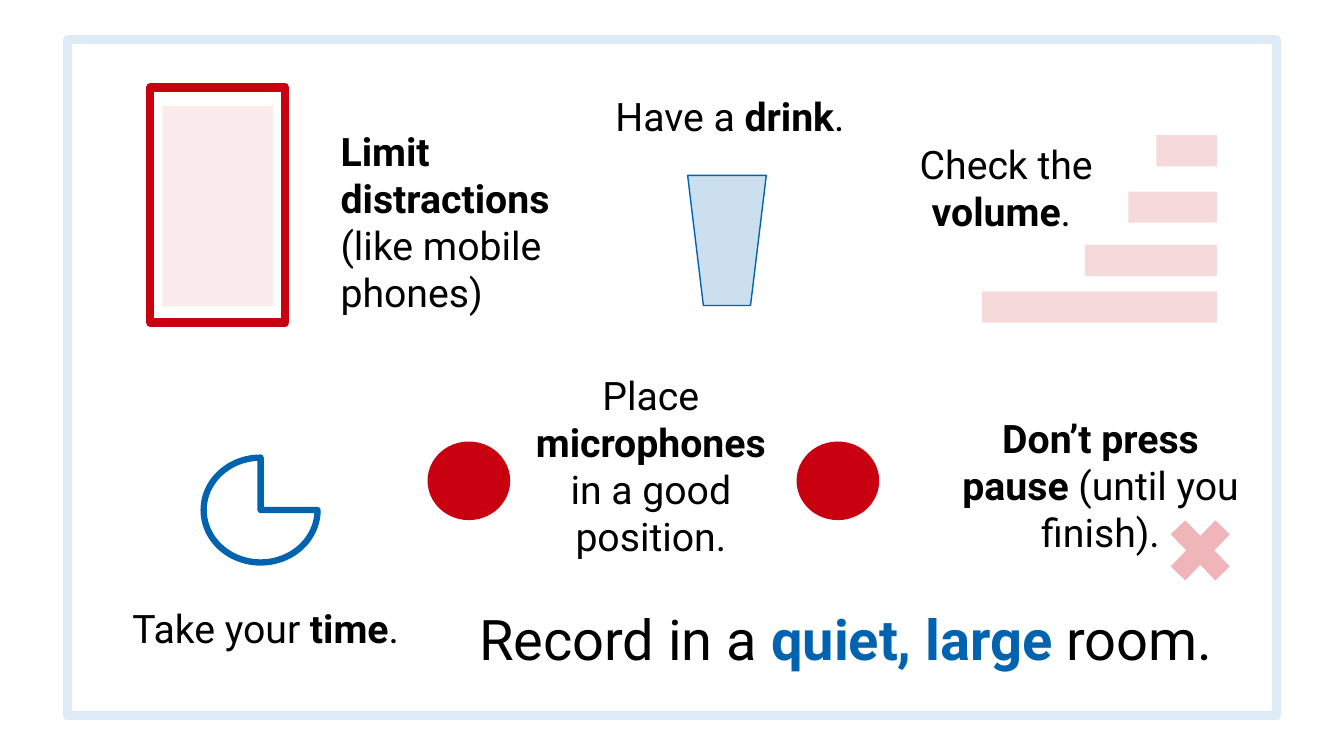
"""Build a slide of tips for making a good recording."""
from lxml.etree import SubElement
from pptx import Presentation
from pptx.dml.color import RGBColor
from pptx.enum.shapes import MSO_SHAPE as Kind
from pptx.enum.text import MSO_AUTO_SIZE as Fit, PP_ALIGN as Align
from pptx.oxml.ns import qn
from pptx.util import Inches, Pt

HUES = {"frame": "DEEBF7", "red": "C8000F", "blue": "0063AF", "text": "000000"}


def hue(name):
    """Return a named colour."""
    return RGBColor.from_string(HUES[name])


def draw(slide, kind, box, fill=None, alpha=100, line=None, width=1):
    """Add a flat shape with an optional tint and outline."""
    shape = slide.shapes.add_shape(kind, *map(Inches, box))
    shape.shadow.inherit = False
    if fill:
        shape.fill.solid()
        shape.fill.fore_color.rgb = hue(fill)
        if alpha < 100:
            tint = shape.fill._xPr.find(".//" + qn("a:srgbClr"))
            SubElement(tint, qn("a:alpha"), val=str(alpha * 1000))
    else:
        shape.fill.background()
    if line:
        shape.line.color.rgb = hue(line)
        shape.line.width = Pt(width)
    else:
        shape.line.fill.background()


def write(slide, box, parts, size=28, align=Align.CENTER, accent="text"):
    """Add one paragraph whose parts are pairs of words and boldness."""
    frame = slide.shapes.add_textbox(*map(Inches, box)).text_frame
    frame.word_wrap = True
    frame.auto_size = Fit.SHAPE_TO_FIT_TEXT
    para = frame.paragraphs[0]
    para.alignment = align
    para.font.name = "Roboto"
    para.font.size = Pt(size)
    for words, bold in parts:
        run = para.add_run()
        run.text = words
        run.font.bold = bold
        run.font.color.rgb = hue(accent if bold else "text")


def add_phone(slide, x, y):
    """Draw the phone and its tip."""
    draw(slide, Kind.RECTANGLE, (x, y, 1.34, 2.33), line="red", width=6)
    draw(slide, Kind.RECTANGLE, (x + 0.12, y + 0.18, 1.1, 1.99), "red", 8)
    write(slide, (x + 1.79, y + 0.34, 2.46, 1.99),
          [("Limit distractions ", True), ("(like mobile phones)", False)],
          align=Align.LEFT)


def add_drink(slide, x, y):
    """Draw the glass below its tip."""
    write(slide, (x, y, 2.64, 0.57),
          [("Have a ", False), ("drink", True), (".", False)])
    draw(slide, Kind.FLOWCHART_MANUAL_OPERATION,
         (x + 0.9, y + 0.87, 0.78, 1.29), "blue", 20, "blue")


def add_volume(slide, x, y):
    """Draw the right-aligned volume bars and their tip."""
    right = x + 3.39
    for drop, wide in ((0, 0.6), (0.56, 0.88), (1.09, 1.31), (1.55, 2.33)):
        draw(slide, Kind.RECTANGLE, (right - wide, y + drop, wide, 0.31), "red", 15)
    write(slide, (x, y, 2.6, 1.04),
          [("Check the ", False), ("volume", True), (". ", False)])


def add_time(slide, x, y):
    """Draw the clock above its tip."""
    draw(slide, Kind.PIE, (x + 0.96, y, 1.13, 1.04), line="blue", width=4.5)
    write(slide, (x, y + 1.41, 3.15, 0.57),
          [("Take your ", False), ("time", True), (".", False)])


def add_mics(slide, x, y):
    """Draw a microphone on each side of the tip."""
    for left in (x, x + 3.66):
        draw(slide, Kind.OVAL, (left, y + 0.75, 0.82, 0.78), "red")
    write(slide, (x + 0.89, y, 2.65, 1.99),
          [("Place ", False), ("microphones", True), (" in a good position.", False)])


def add_pause(slide, x, y):
    """Draw the pause tip and its cross."""
    write(slide, (x, y, 3.15, 1.51),
          [("Don’t press pause ", True), ("(until you finish).", False)])
    draw(slide, Kind.MATH_MULTIPLY, (x + 2.14, y + 0.96, 0.85, 0.88), "red", 29)


def add_room(slide, x, y):
    """Write the main tip in large type."""
    write(slide, (x, y, 7.88, 0.77),
          [("Record in a ", False), ("quiet, large ", True), ("room.", False)],
          size=40, accent="blue")


def main():
    """Build and save the slide."""
    deck = Presentation()
    deck.slide_width, deck.slide_height = Inches(13.33), Inches(7.5)
    slide = deck.slides.add_slide(deck.slide_layouts[6])
    draw(slide, Kind.RECTANGLE, (0.67, 0.39, 11.99, 6.71), line="frame", width=6)
    add_phone(slide, 1.49, 0.87)
    add_drink(slide, 5.92, 0.87)
    add_volume(slide, 8.68, 1.34)
    add_time(slide, 1.06, 4.54)
    add_mics(slide, 4.24, 3.63)
    add_pause(slide, 9.34, 4.06)
    add_room(slide, 4.45, 5.95)
    deck.save("out.pptx")


if __name__ == "__main__":
    main()
